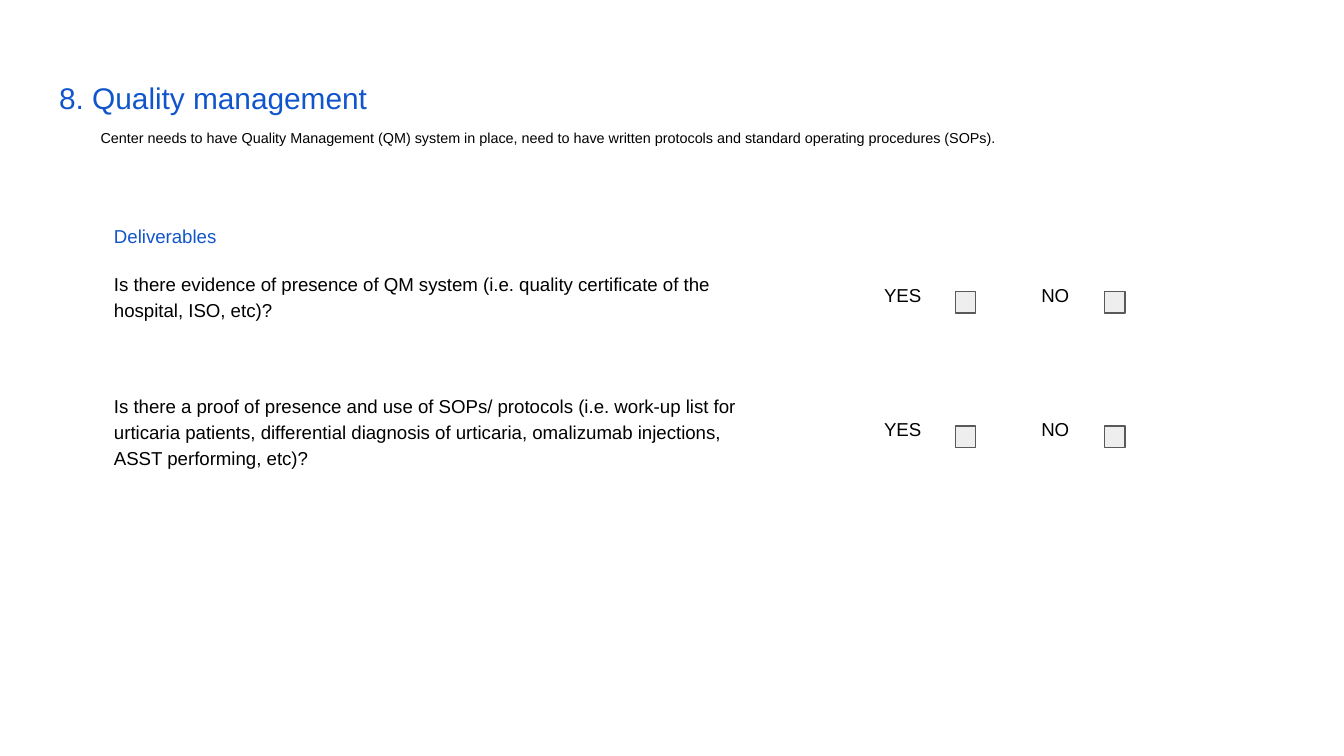
from pptx import Presentation
from pptx.dml.color import RGBColor
from pptx.enum.shapes import MSO_SHAPE
from pptx.enum.text import MSO_ANCHOR, PP_ALIGN
from pptx.util import Inches, Pt

RECTANGLE = MSO_SHAPE.RECTANGLE
TOP = MSO_ANCHOR.TOP
LEFT = PP_ALIGN.LEFT

# Content
BLUE, BLACK, BOX_FILL, BOX_LINE = "1155CC", "000000", "EEEEEE", "595959"
TITLE = "8. Quality management"
REQUIREMENT = (
    "Center needs to have Quality Management (QM) system in place, "
    "need to have written protocols and standard operating procedures (SOPs)."
)
# text, colour, space before, space after
DELIVERABLES = [
    ("Deliverables", BLUE, 6, 0),
    ("Is there evidence of presence of QM system (i.e. quality certificate "
     "of the hospital, ISO, etc)?", BLACK, 12, 0),
    ("Is there a proof of presence and use of SOPs/ protocols (i.e. work-up "
     "list for urticaria patients, differential diagnosis of urticaria, "
     "omalizumab injections, ASST performing, etc)?", BLACK, 37.6, 12),
]
# answer, label left, checkbox left
ANSWERS = [("YES", 6.48, 7.11), ("NO", 7.65, 8.22)]
ANSWER_TOPS = [1.99, 2.99]
CHECKBOX_DROP = 0.18


def rgb(value):
    return RGBColor.from_string(value)


def place(shape, left, top, width, height):
    shape.left, shape.top = Inches(left), Inches(top)
    shape.width, shape.height = Inches(width), Inches(height)


def write(frame, paragraphs, size, spacing, margin_top=0.1):
    frame.word_wrap = True
    frame.vertical_anchor = TOP
    frame.margin_left = frame.margin_right = Inches(0.1)
    frame.margin_top, frame.margin_bottom = Inches(margin_top), Inches(0.1)
    for i, (text, color, before, after) in enumerate(paragraphs):
        paragraph = frame.add_paragraph() if i else frame.paragraphs[0]
        paragraph.text = text
        paragraph.alignment = LEFT
        paragraph.line_spacing = spacing
        paragraph.space_before, paragraph.space_after = Pt(before), Pt(after)
        paragraph.font.name = "Arial"
        paragraph.font.size = Pt(size)
        paragraph.font.color.rgb = rgb(color)


def add_text(slide, box, paragraphs, size=10, spacing=1.15, margin_top=0.1):
    textbox = slide.shapes.add_textbox(*map(Inches, box))
    write(textbox.text_frame, paragraphs, size, spacing, margin_top)


def add_checkbox(slide, left, top):
    checkbox = slide.shapes.add_shape(
        RECTANGLE, Inches(left), Inches(top), Inches(0.15), Inches(0.16))
    checkbox.shadow.inherit = False
    checkbox.fill.solid()
    checkbox.fill.fore_color.rgb = rgb(BOX_FILL)
    checkbox.line.color.rgb = rgb(BOX_LINE)
    checkbox.line.width = Pt(0.75)


def main():
    prs = Presentation()
    prs.slide_width = Inches(10)
    prs.slide_height = prs.slide_width * 9 // 16
    slide = prs.slides.add_slide(prs.slide_layouts.get_by_name("Title Only"))

    # Title and requirement
    title = slide.shapes.title
    place(title, 0.34, 0.49, 9.32, 0.48)
    write(title.text_frame, [(TITLE, BLUE, 0, 0)], 16, 1.0)
    add_text(slide, (0.65, 0.89, 7.36, 0.56),
             [(REQUIREMENT, BLACK, 0, 12)], 7.7, 0.95, margin_top=0.14)

    # Deliverables
    add_text(slide, (0.75, 1.55, 5.06, 2.04), DELIVERABLES)

    # Answers with checkboxes, one row per question
    for top in ANSWER_TOPS:
        for answer, label_left, checkbox_left in ANSWERS:
            add_text(slide, (label_left, top, 0.5, 0.37),
                     [(answer, BLACK, 6, 12)])
            add_checkbox(slide, checkbox_left, top + CHECKBOX_DROP)

    prs.save("out.pptx")


if __name__ == "__main__":
    main()
